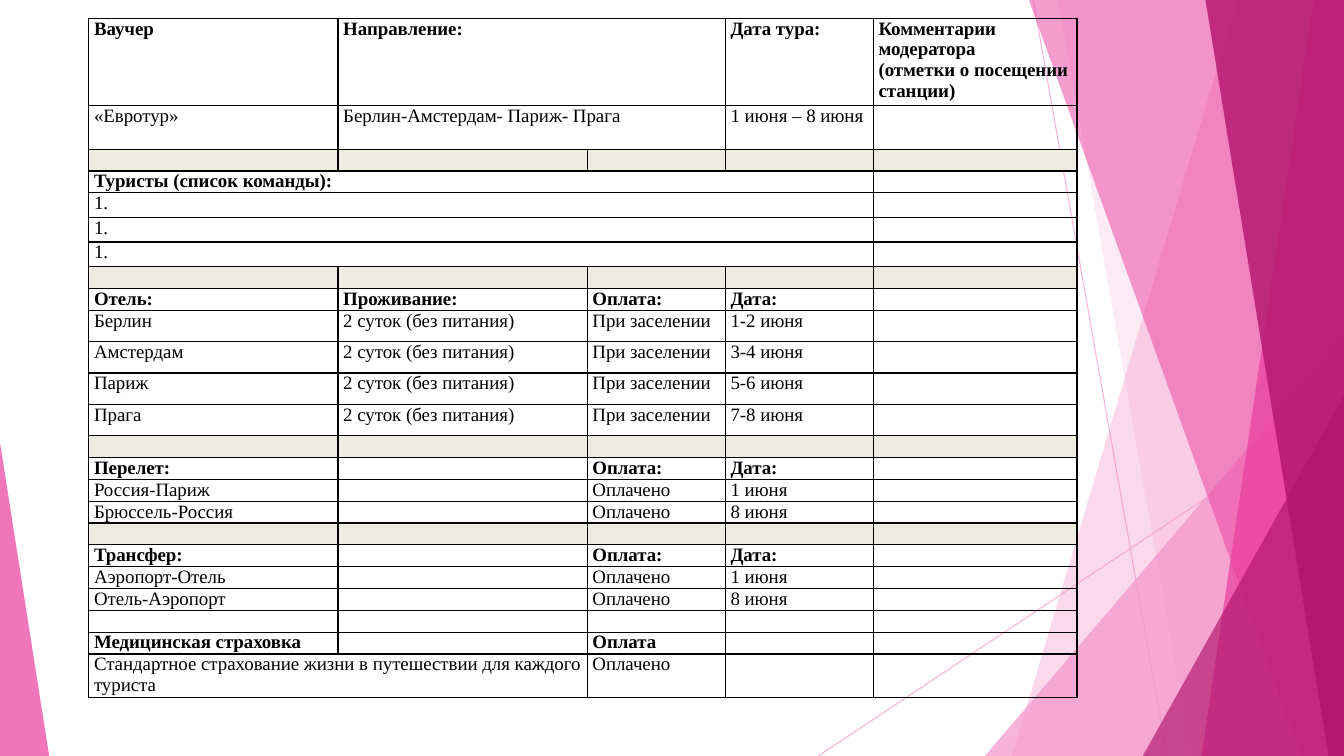
from lxml import etree
from pptx import Presentation
from pptx.dml.color import RGBColor
from pptx.enum.shapes import MSO_CONNECTOR as CONN, MSO_SHAPE as SHAPE
from pptx.oxml.ns import qn
from pptx.util import Cm, Pt

W, H = 33.87, 19.05
LIGHT, PINK, DARK, BEIGE, BLACK = "F496CB", "EB3D9F", "B2136D", "EEECE1", "000000"
FONT = {"size": Pt(13.5), "name": "Times New Roman"}
MARGINS = {"margin_left": Cm(0.13), "margin_right": Cm(0.13), "margin_top": 0, "margin_bottom": 0}
COLS = [6.28, 6.28, 3.48, 3.73, 5.13]
LINE, ITEM, HOTEL = 0.55, 0.62, 0.79

STAY, DESK, PAID = "2 суток (без питания)", "При заселении", "Оплачено"
ROWS = [
    ("head", 4 * LINE, ["Ваучер", "Направление:", "", "Дата тура:",
                        "Комментарии модератора\n(отметки о посещении станции)"]),
    ("text", 2 * LINE, ["«Евротур»", "Берлин-Амстердам- Париж- Прага", "", "1 июня – 8 июня"]),
    ("band", LINE, []),
    ("head", LINE, ["Туристы (список команды):"]),
    *[("text", ITEM, ["1."])] * 3,
    ("band", LINE, []),
    ("head", LINE, ["Отель:", "Проживание:", "Оплата:", "Дата:"]),
    ("text", HOTEL, ["Берлин", STAY, DESK, "1-2 июня"]),
    ("text", HOTEL, ["Амстердам", STAY, DESK, "3-4 июня"]),
    ("text", HOTEL, ["Париж", STAY, DESK, "5-6 июня"]),
    ("text", HOTEL, ["Прага", STAY, DESK, "7-8 июня"]),
    ("band", LINE, []),
    ("head", LINE, ["Перелет:", "", "Оплата:", "Дата:"]),
    ("text", LINE, ["Россия-Париж", "", PAID, "1 июня"]),
    ("text", LINE, ["Брюссель-Россия", "", PAID, "8 июня"]),
    ("band", LINE, []),
    ("head", LINE, ["Трансфер:", "", "Оплата:", "Дата:"]),
    ("text", LINE, ["Аэропорт-Отель", "", PAID, "1 июня"]),
    ("text", LINE, ["Отель-Аэропорт", "", PAID, "8 июня"]),
    ("text", LINE, []),
    ("head", LINE, ["Медицинская страховка", "", "Оплата"]),
    ("text", 2 * LINE, ["Стандартное страхование жизни в путешествии для каждого туриста", "", PAID]),
]
SPANS = [(0, 1, 2), (1, 1, 2), *[(row, 0, 3) for row in range(3, 7)], (23, 0, 1)]


def rgb(color):
    """Turn a hex string into a colour."""
    return RGBColor.from_string(color)


def set_all(obj, values):
    """Set the attributes of an object from a dict."""
    for name, value in values.items():
        setattr(obj, name, value)


def set_alpha(sp, percent):
    """Make the solid colour of a shape or line see-through."""
    clr = next(sp._element.spPr.iter(qn("a:srgbClr")))
    etree.SubElement(clr, qn("a:alpha"), val=str(percent * 1000))


def paint(sp, color, alpha):
    """Fill a shape with a see-through colour and no outline."""
    sp.shadow.inherit = False
    sp.fill.solid()
    sp.fill.fore_color.rgb = rgb(color)
    set_alpha(sp, alpha)
    sp.line.fill.background()


def add_ray(s, x1, y1, x2, y2):
    """Draw one thin pink line."""
    ray = s.shapes.add_connector(CONN.STRAIGHT, Cm(x1), Cm(y1), Cm(x2), Cm(y2))
    ray.line.width = Pt(0.75)
    ray.line.color.rgb = rgb(LIGHT)
    set_alpha(ray, 70)
    etree.SubElement(ray._element.spPr, qn("a:effectLst"))


def add_blade(s, top_x, bottom_x, color, alpha):
    """Draw a full-height facet from a slanted edge to the right side."""
    fb = s.shapes.build_freeform(Cm(top_x), 0)
    fb.add_line_segments([(Cm(W), 0), (Cm(W), Cm(H)), (Cm(bottom_x), Cm(H))])
    paint(fb.convert_to_shape(), color, alpha)


def add_corner(s, x, y, w, apex, color, alpha):
    """Draw a triangle standing on the bottom edge."""
    sp = s.shapes.add_shape(SHAPE.ISOSCELES_TRIANGLE, Cm(x), Cm(y), Cm(w), Cm(H - y))
    sp.adjustments[0] = apex
    paint(sp, color, alpha)


def add_facets(s):
    """Draw the pink facets at both sides of the slide."""
    add_ray(s, 26.04, 0, 29.41, H)
    add_ray(s, W, 10.24, 20.62, H)
    add_blade(s, 31.19, 25.5, LIGHT, 36)
    add_blade(s, 26.67, 30.02, LIGHT, 20)
    add_corner(s, 24.82, 8.46, W - 24.82, 1, LIGHT, 72)
    add_blade(s, 25.93, 32.79, PINK, 50)
    add_blade(s, 33.1, 30.28, PINK, 70)
    add_blade(s, 30.38, 33.48, DARK, 80)
    add_corner(s, 28.8, 9.98, W - 28.8, 1, DARK, 66)
    add_corner(s, 0, 11.15, 1.24, 0, PINK, 70)


def add_borders(cell):
    """Give a cell thin black borders on all sides."""
    tc_pr = cell._tc.get_or_add_tcPr()
    for side in ("lnL", "lnR", "lnT", "lnB"):
        ln = etree.SubElement(tc_pr, qn(f"a:{side}"), w=str(Pt(1)))
        fill = etree.SubElement(ln, qn("a:solidFill"))
        etree.SubElement(fill, qn("a:srgbClr"), val=BLACK)


def fill_cell(cell, kind, text):
    """Write and format one cell."""
    set_all(cell, MARGINS)
    add_borders(cell)
    if kind == "band":
        cell.fill.solid()
        cell.fill.fore_color.rgb = rgb(BEIGE)
    else:
        cell.fill.background()
    cell.text = text
    for p in cell.text_frame.paragraphs:
        for r in p.runs:
            set_all(r.font, {**FONT, "bold": kind == "head"})
            r.font.color.rgb = rgb(BLACK)
        if not p.runs:
            end = etree.SubElement(p._p, qn("a:endParaRPr"), sz=str(int(FONT["size"].pt * 100)))
            etree.SubElement(end, qn("a:latin"), typeface=FONT["name"])


def add_voucher(s, x, y):
    """Build the voucher table with its top left corner at x, y."""
    height = sum(h for _, h, _ in ROWS)
    frame = s.shapes.add_table(len(ROWS), len(COLS), Cm(x), Cm(y), Cm(sum(COLS)), Cm(height))
    table = frame.table
    set_all(table, {"first_row": False, "horz_banding": False})
    for col, width in zip(table.columns, COLS):
        col.width = Cm(width)
    for row, (kind, h, texts) in zip(table.rows, ROWS):
        row.height = Cm(h)
        for i, cell in enumerate(row.cells):
            fill_cell(cell, kind, texts[i] if i < len(texts) else "")
    for row, first, last in SPANS:
        table.cell(row, first).merge(table.cell(row, last))


def main():
    """Build and save the slide."""
    prs = Presentation()
    set_all(prs, {"slide_width": Cm(W), "slide_height": Cm(H)})
    s = prs.slides.add_slide(prs.slide_layouts[6])
    add_facets(s)
    add_voucher(s, 2.24, 0.46)
    prs.save("out.pptx")


if __name__ == "__main__":
    main()
